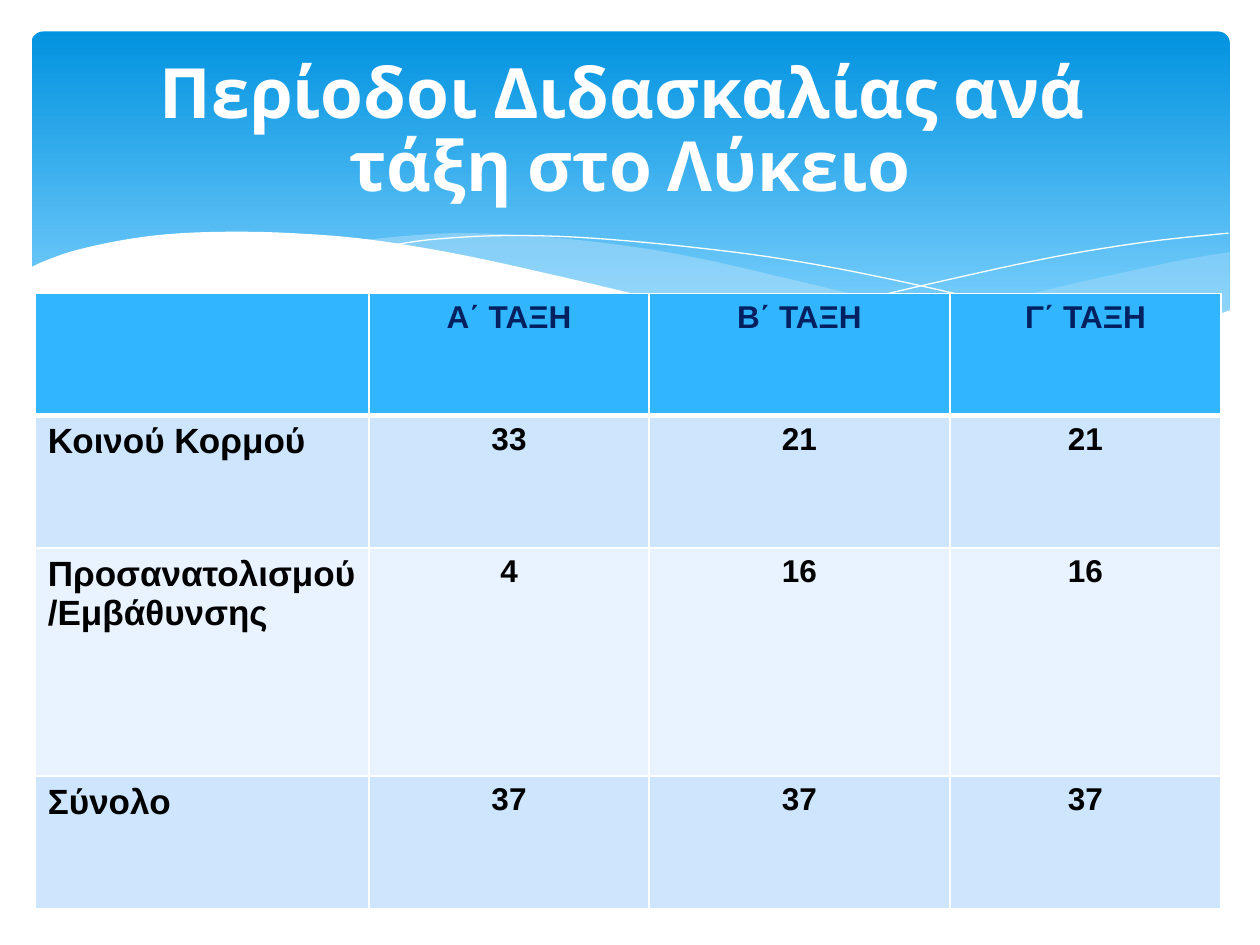
from dataclasses import dataclass
from itertools import chain

from lxml.etree import SubElement
from pptx import Presentation
from pptx.dml.color import RGBColor
from pptx.enum.shapes import MSO_SHAPE
from pptx.enum.text import MSO_ANCHOR, PP_ALIGN
from pptx.oxml import parse_xml
from pptx.oxml.ns import nsdecls, qn
from pptx.util import Inches, Pt


@dataclass(frozen=True)
class Theme:
    """Colours, fonts and type sizes of the deck."""
    white: str = "FFFFFF"
    black: str = "000000"
    navy: str = "002060"
    sky_top: str = "0293E0"
    sky_bottom: str = "83D3FE"
    mist: str = "C6E7FC"
    header: str = "31B6FD"
    bands: tuple = ("CEE5FE", "E8F3FF")
    title_font: str = "Cabin"
    body_font: str = "Arial"
    title_size: float = 39.6
    label_size: float = 20
    value_size: float = 18


def smooth(points, steps=6):
    """Return a Catmull-Rom curve sampled through the points."""
    padded = [points[0], *points, points[-1]]
    curve = [points[0]]
    for a, b, c, d in zip(padded, padded[1:], padded[2:], padded[3:]):
        for step in range(1, steps + 1):
            t = step / steps
            curve.append(tuple(
                (2 * q + (r - p) * t + (2 * p - 5 * q + 4 * r - s) * t ** 2
                 + (3 * q - p - 3 * r + s) * t ** 3) / 2
                for p, q, r, s in zip(a, b, c, d)))
    return curve


class SlideBuilder:
    """Draws elements on one slide with a grid of 100 columns by 75 rows."""

    def __init__(self, deck, theme):
        """Add a title-only slide to the deck."""
        self.theme = theme
        self.column = deck.slide_width / 100
        self.row = deck.slide_height / 75
        self.page = deck.slides.add_slide(deck.slide_layouts[5])
        self.shapes = self.page.shapes

    def place(self, x, y):
        """Turn a grid position into slide units."""
        return round(x * self.column), round(y * self.row)

    def span(self, para, text, font, size, color):
        """Add one bold run."""
        run = para.add_run()
        run.text = text
        run.font.name, run.font.size, run.font.bold = font, Pt(size), True
        run.font.color.rgb = RGBColor.from_string(color)

    def title(self, lines, left, top, width, height):
        """Format the title placeholder and bring it to the front."""
        box = self.shapes.title
        box.left, box.top = self.place(left, top)
        box.width, box.height = self.place(width, height)
        box.text_frame.word_wrap = True
        box.text_frame.vertical_anchor = MSO_ANCHOR.MIDDLE
        para = box.text_frame.paragraphs[0]
        para.alignment, para.line_spacing = PP_ALIGN.CENTER, 0.88
        for index, line in enumerate(lines):
            if index:
                para.add_line_break()
            self.span(para, line, self.theme.title_font,
                      self.theme.title_size, self.theme.white)
        box.element.getparent().append(box.element)

    def banner(self, left, top, width, height):
        """Draw the rounded gradient panel."""
        box = self.shapes.add_shape(MSO_SHAPE.ROUNDED_RECTANGLE, *self.place(left, top),
                                    *self.place(width, height))
        box.adjustments[0] = 0.034
        box.shadow.inherit = False
        box.line.fill.background()
        box.fill.gradient()
        box.fill.gradient_angle = 270
        stops = ((0, self.theme.sky_top), (0.9, self.theme.sky_bottom))
        for stop, (position, color) in zip(box.fill.gradient_stops, stops):
            stop.position = position
            stop.color.rgb = RGBColor.from_string(color)

    def outline(self, curves, close):
        """Build a freeform from smoothed curves joined end to end."""
        points = [self.place(x, y) for x, y in chain(*map(smooth, curves))]
        builder = self.shapes.build_freeform(*points[0], scale=1.0)
        builder.add_line_segments(points[1:], close=close)
        shape = builder.convert_to_shape()
        shape.shadow.inherit = False
        return shape

    def wave(self, curves, color, opacity=100):
        """Draw a filled wave."""
        shape = self.outline(curves, True)
        shape.line.fill.background()
        shape.fill.solid()
        shape.fill.fore_color.rgb = RGBColor.from_string(color)
        paint = next(shape.element.spPr.iter(qn("a:srgbClr")))
        SubElement(paint, qn("a:alpha"), val=str(opacity * 1000))

    def thread(self, points):
        """Draw a white hairline curve."""
        shape = self.outline([points], False)
        shape.fill.background()
        shape.line.color.rgb = RGBColor.from_string(self.theme.white)
        shape.line.width = Pt(0)

    def borders(self, cell, bottom):
        """Give a cell white borders with the given bottom width."""
        properties = cell._tc.get_or_add_tcPr()
        for index, (side, width) in enumerate(zip("LRTB", (1, 1, 1, bottom))):
            properties.insert(index, parse_xml(
                f'<a:ln{side} {nsdecls("a")} w="{Pt(width)}"><a:solidFill>'
                f'<a:srgbClr val="{self.theme.white}"/></a:solidFill></a:ln{side}>'))

    def table(self, rows, left, top, widths, heights):
        """Draw a banded table with a header row and a label column."""
        theme = self.theme
        frame = self.shapes.add_table(
            len(rows), len(widths), *self.place(left, top),
            *self.place(sum(widths), sum(heights)))
        table = frame.table
        for column, width in zip(table.columns, widths):
            column.width = round(width * self.column)
        for row, height in zip(table.rows, heights):
            row.height = round(height * self.row)
        for i, texts in enumerate(rows):
            for j, text in enumerate(texts):
                cell = table.cell(i, j)
                cell.fill.solid()
                fill = theme.bands[(i - 1) % 2] if i else theme.header
                cell.fill.fore_color.rgb = RGBColor.from_string(fill)
                self.borders(cell, 1 if i else 3)
                para = cell.text_frame.paragraphs[0]
                para.alignment = PP_ALIGN.CENTER if j else PP_ALIGN.LEFT
                if text:
                    self.span(para, text, theme.body_font,
                              theme.value_size if j else theme.label_size,
                              theme.black if i else theme.navy)


def main():
    """Build the deck."""
    deck = Presentation()
    deck.slide_width, deck.slide_height = Inches(10), Inches(7.5)
    theme = Theme()
    slide = SlideBuilder(deck, theme)
    slide.banner(2.5, 2.5, 95.1, 27)
    slide.wave([
        [(97.6, 20), (93.5, 20.7), (86.1, 22.3), (77.9, 24.2), (66.1, 26.5)],
        [(66.1, 26.5), (73.2, 27.4), (80.3, 27.8), (87.2, 27.4), (92.8, 26.3), (97.6, 24.7)],
    ], theme.mist, 29)
    slide.wave([
        [(89.3, 27.3), (80.7, 26), (70.6, 24), (62.9, 22.2), (55.5, 20.5), (48.9, 19.4),
         (42, 18.7), (36.1, 18.5), (31.3, 18.8), (28.6, 19.1)],
        [(28.6, 19.1), (36.2, 20.3), (44.9, 22.2), (56.6, 24.8), (66.5, 26.6), (74.8, 27.6),
         (81.8, 27.8), (89.3, 27.3)],
    ], theme.mist, 40)
    slide.thread([(30.9, 19.5), (34.4, 19), (40.1, 18.7), (46.9, 18.9), (55.6, 19.7),
                  (63.6, 20.8), (72.7, 22.6), (83.1, 25.1), (90.7, 27.2)])
    slide.thread([(61.3, 25.7), (67.2, 24.1), (74.8, 22.3), (83.6, 20.4), (91, 19.2),
                  (97.5, 18.5)])
    slide.wave([
        [(97.7, 24.6), (93, 26.2), (87.5, 27.3), (80.9, 27.7), (72.6, 27.2), (62.6, 25.8),
         (52.9, 23.9), (44.7, 22), (36.5, 20.2), (29.2, 19), (23, 18.5), (17.7, 18.4),
         (13.2, 18.6), (9.5, 19.1), (5.9, 19.9), (3.6, 20.7), (2.3, 21.3)],
        [(2.3, 32.9), (97.7, 32.9)],
    ], theme.white)
    slide.table([
        ("", "Α΄ ΤΑΞΗ", "Β΄ ΤΑΞΗ", "Γ΄ ΤΑΞΗ"),
        ("Κοινού Κορμού", "33", "21", "21"),
        ("Προσανατολισμού /Εμβάθυνσης", "4", "16", "16"),
        ("Σύνολο", "37", "37", "37"),
    ], 2.8, 23.3, (26.5, 22.2, 23.9, 21.5), (9.7, 10.5, 18.1, 10.5))
    slide.title(("Περίοδοι Διδασκαλίας ανά ", "τάξη στο Λύκειο"), 5, 3.7, 90, 13.7)
    deck.save("out.pptx")


if __name__ == "__main__":
    main()
